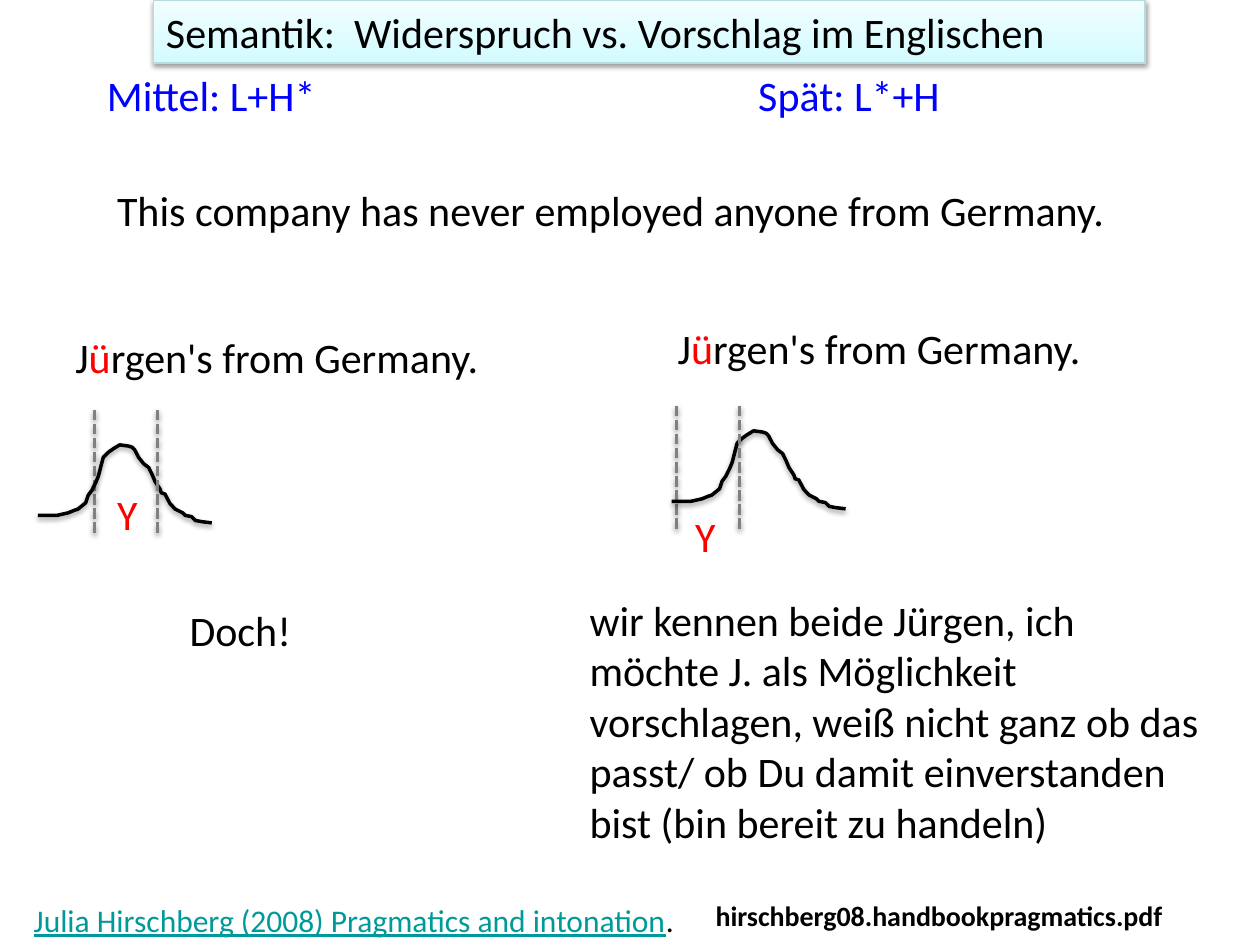
"""Build a slide contrasting two English pitch accents and their meanings."""
from lxml.etree import SubElement
from pptx import Presentation
from pptx.dml.color import RGBColor
from pptx.enum.dml import MSO_LINE_DASH_STYLE as Dash
from pptx.enum.shapes import MSO_CONNECTOR as Connector, MSO_SHAPE as Shape
from pptx.enum.text import MSO_ANCHOR as Anchor, PP_ALIGN as Align
from pptx.oxml.ns import qn
from pptx.util import Pt

COLORS = {
    "black": "000000", "red": "FF0000", "blue": "0000FF", "link": "009999",
    "gray": "808080", "border": "B6DCDF", "bottom": "D3FBFF", "top": "F2FEFF",
}
FONT = "Calibri"
TITLE = "Semantik:  Widerspruch vs. Vorschlag im Englischen"
TITLE_BOX = (87.8, 0, 566.6, 36)
ANSWER = [("J", "black"), ("ü", "red"), ("rgen's from Germany.", "black")]
SOURCE = [("Julia Hirschberg (2008) Pragmatics and intonation", "link"), (".", "black")]
PROPOSAL = ("wir kennen beide Jürgen, ich möchte J. als Möglichkeit vorschlagen, "
            "weiß nicht ganz ob das passt/ ob Du damit einverstanden bist "
            "(bin bereit zu handeln)")

TEXTS = [
    ((12.2, 511.2, 390.2, 28.8), SOURCE, 18, False),
    ((401.8, 509.8, 282.2, 26.6), [("hirschberg08.handbookpragmatics.pdf", "black")], 16, True),
    ((54, 36, 185.8, 36), [("Mittel: L+H*", "blue")], 24, False),
    ((426.2, 36, 185.8, 36), [("Spät: L*+H", "blue")], 24, False),
    ((59.8, 102.2, 612, 36),
     [("This company has never employed anyone from Germany.", "black")], 24, False),
    ((36, 185.8, 264.2, 36.7), ANSWER, 24, False),
    ((380.2, 180.7, 264.2, 36.7), ANSWER, 24, False),
    ((95.8, 342, 108, 36.7), [(" Doch!", "black")], 24, False),
    ((329.8, 336.2, 365.8, 152.6), [(PROPOSAL, "black")], 24, False),
]

ACCENTS = [
    {"curve": (21.6, 254.2), "vowel_start": (54, 234), "label": (59.8, 275.8)},
    {"curve": (383.8, 246.2), "vowel_start": (386.6, 231.8), "label": (390.2, 288)},
]
VOWEL_WIDTH, MARKER_HEIGHT = 36, 72
PITCH = [
    (0, 40.3), (11, 40.3), (17.3, 38.9), (20.9, 37.4), (23, 36.7), (27.4, 33.1),
    (28.8, 28.8), (31, 25.9), (33.1, 21.6), (34.6, 18), (36, 12.5), (37.4, 7.2),
    (40, 4.5), (43.2, 2.2), (46.8, 0), (51.8, 0.7), (54, 1.4), (55.4, 2.9),
    (57.6, 7.2), (60.5, 10.8), (63.4, 13), (65.5, 17.3), (67, 20.9), (69.8, 25.2),
    (70.6, 27.4), (72.7, 28.1), (73.4, 29.5), (75.5, 33.5), (78.5, 36.7),
    (82.8, 38.9), (84.2, 40.3), (87.8, 41), (90, 43.2), (93.6, 43.9), (99.4, 44.6),
]


def color(name):
    return RGBColor.from_string(COLORS[name])


def add_shadow(shape):
    effects = SubElement(shape._element.spPr, qn("a:effectLst"))
    shadow = SubElement(effects, qn("a:outerShdw"), blurRad=str(Pt(3.1)),
                        dist=str(Pt(1.6)), dir="5400000", rotWithShape="0")
    black = SubElement(shadow, qn("a:srgbClr"), val=COLORS["black"])
    SubElement(black, qn("a:alpha"), val="38000")


def style_line(shape, name, width):
    shape.line.color.rgb = color(name)
    shape.line.width = Pt(width)


def write(shape, runs, size=24, bold=False):
    frame = shape.text_frame
    frame.word_wrap = True
    frame.vertical_anchor = Anchor.TOP
    paragraph = frame.paragraphs[0]
    paragraph.alignment = Align.LEFT
    paragraph.font.name = FONT
    paragraph.font.size = Pt(size)
    paragraph.font.bold = bold
    for text, name in runs:
        run = paragraph.add_run()
        run.text = text
        run.font.color.rgb = color(name)
        if name == "link":
            run.font.underline = True


def add_text(slide, box, runs, size=24, bold=False):
    write(slide.shapes.add_textbox(*map(Pt, box)), runs, size, bold)


def add_title(slide):
    title = slide.shapes.add_shape(Shape.RECTANGLE, *map(Pt, TITLE_BOX))
    title.fill.gradient()
    title.fill.gradient_angle = 90
    for stop, name, position in zip(title.fill.gradient_stops, ("bottom", "top"), (0, 1)):
        stop.color.rgb = color(name)
        stop.position = position
    style_line(title, "border", 0.75)
    add_shadow(title)
    write(title, [(TITLE, "black")])


def add_marker(slide, x, y):
    marker = slide.shapes.add_connector(
        Connector.STRAIGHT, Pt(x), Pt(y), Pt(x), Pt(y + MARKER_HEIGHT))
    style_line(marker, "gray", 2)
    marker.line.dash_style = Dash.SQUARE_DOT
    add_shadow(marker)


def add_pitch_curve(slide, left, top):
    points = [(Pt(left + x), Pt(top + y)) for x, y in PITCH]
    builder = slide.shapes.build_freeform(*points[0])
    builder.add_line_segments(points[1:], close=False)
    curve = builder.convert_to_shape()
    curve.fill.background()
    style_line(curve, "black", 2)
    add_shadow(curve)


def add_accent(slide, accent):
    x, y = accent["vowel_start"]
    add_marker(slide, x, y)
    add_text(slide, (*accent["label"], 36, 36.7), [("Y", "red")])
    add_pitch_curve(slide, *accent["curve"])
    add_marker(slide, x + VOWEL_WIDTH, y)


def main():
    presentation = Presentation()
    presentation.slide_width, presentation.slide_height = Pt(720), Pt(540)
    slide = presentation.slides.add_slide(presentation.slide_layouts[6])
    add_title(slide)
    for text in TEXTS:
        add_text(slide, *text)
    for accent in ACCENTS:
        add_accent(slide, accent)
    presentation.save("out.pptx")


if __name__ == "__main__":
    main()
